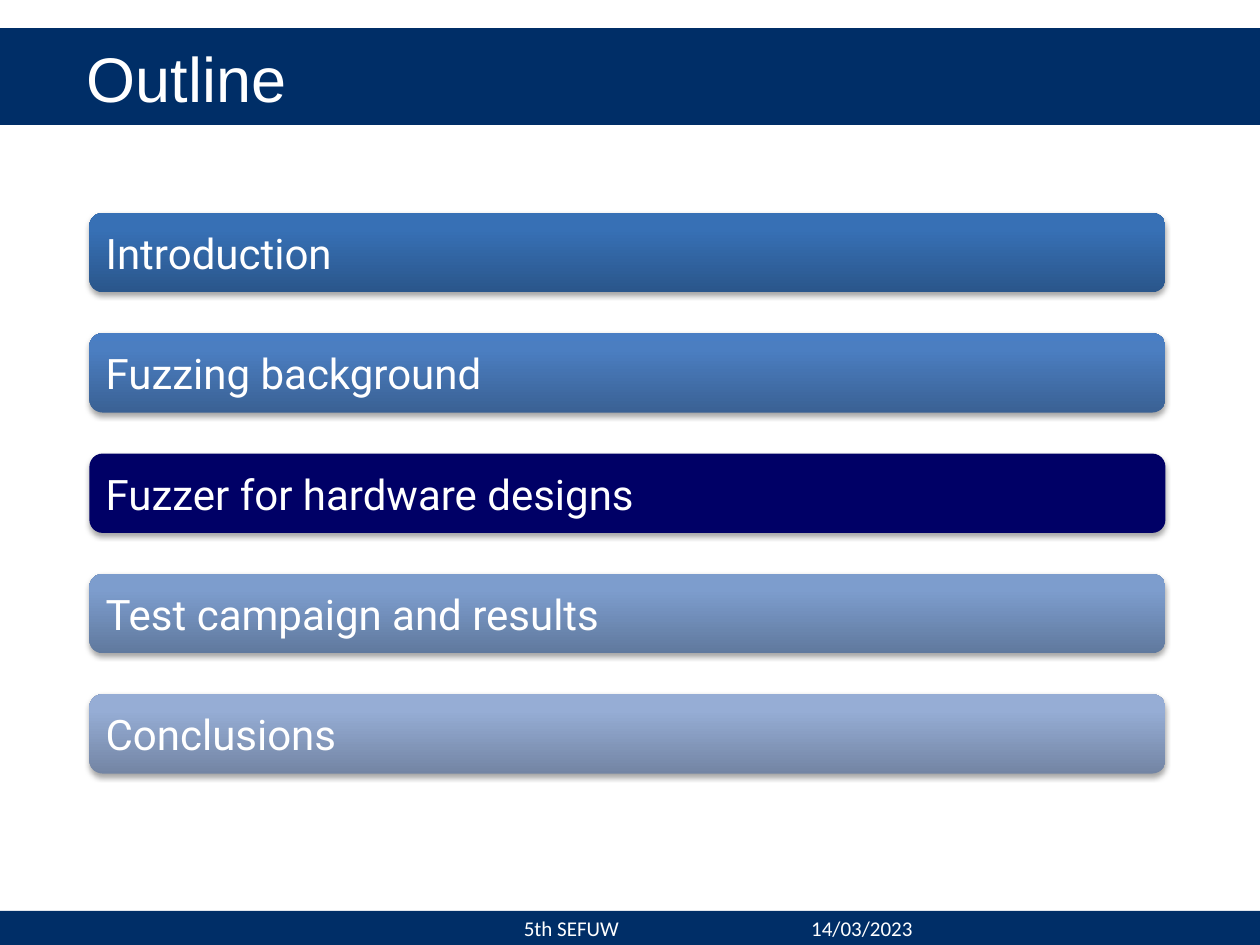
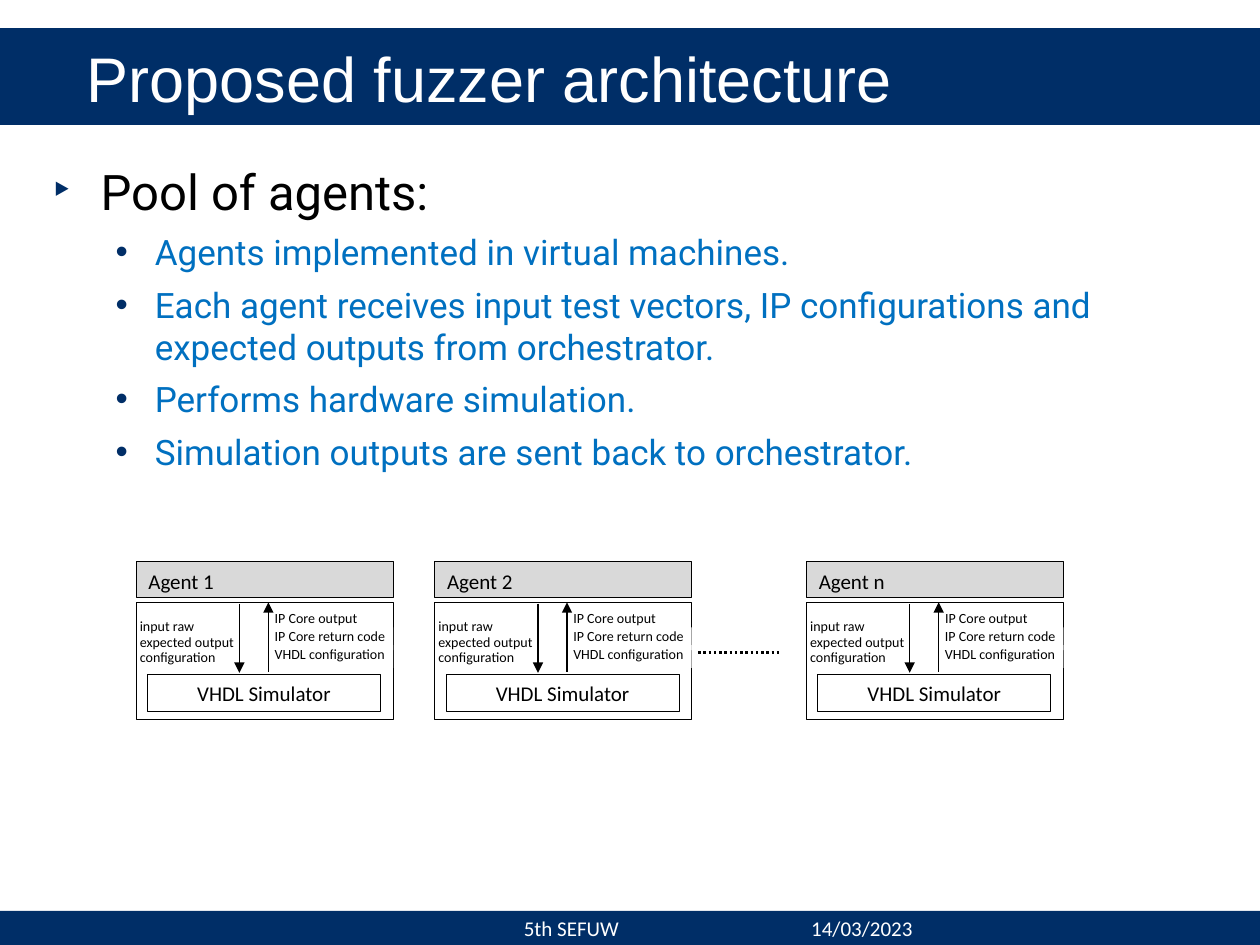
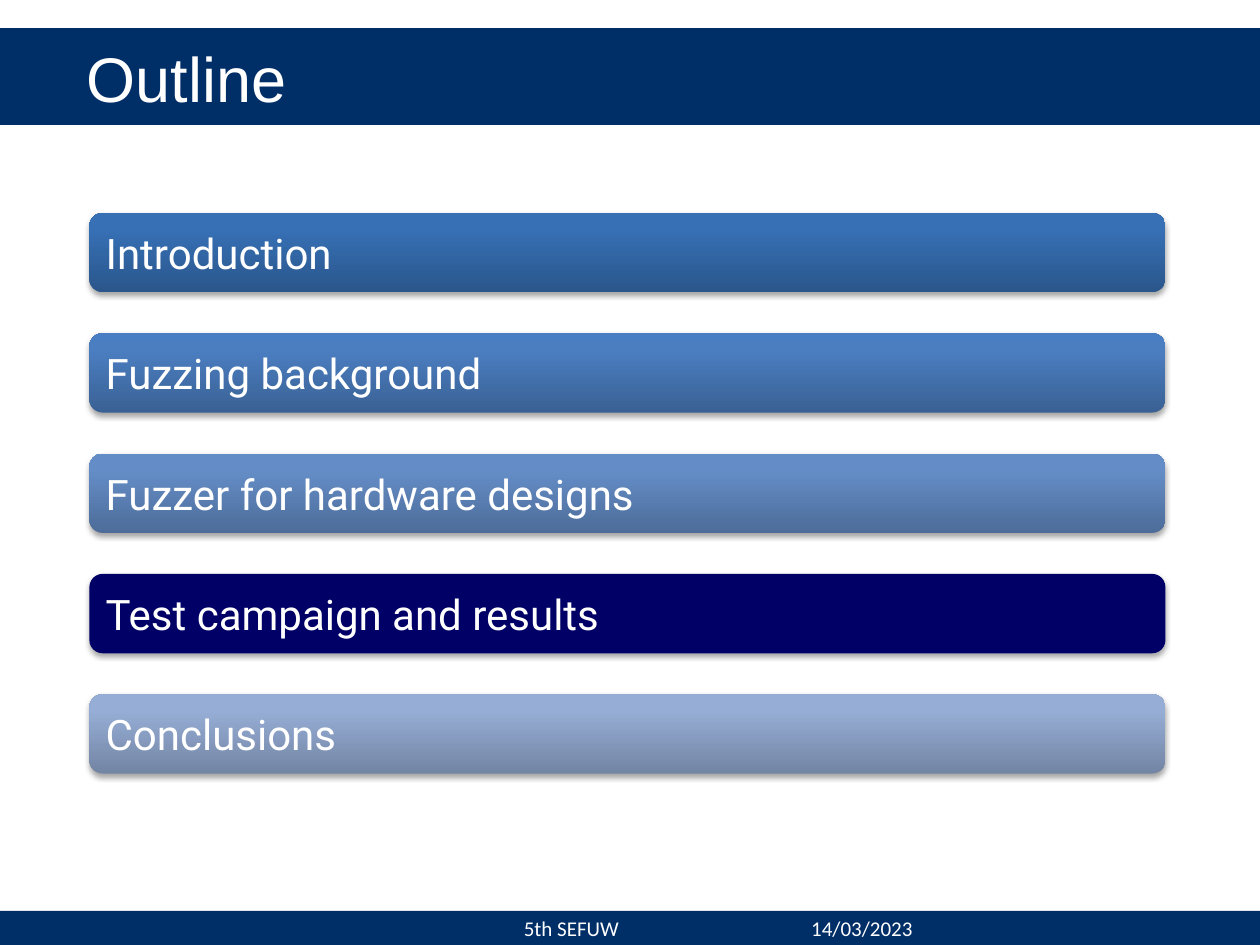
from lxml import etree
from pptx import Presentation
from pptx.dml.color import RGBColor
from pptx.enum.dml import MSO_LINE
from pptx.enum.shapes import MSO_CONNECTOR, MSO_SHAPE
from pptx.enum.text import MSO_ANCHOR, PP_ALIGN
from pptx.oxml.ns import qn
from pptx.util import Inches, Pt

WIDTH, HEIGHT = 10, 7.5
NAVY, ACTIVE, GREY, BLUE = "002E67", "000066", "D9D9D9", "0070C0"
BLACK, WHITE = "000000", "FFFFFF"

EVENT, DATE = "5th SEFUW", "14/03/2023"

# Section and its gradient from bottom to top, with stops at 0, 80 and 100 %
SECTIONS = [
    ("Introduction", ("2A568B", "3770B5", "3570B8")),
    ("Fuzzing background", ("3A6194", "4B7EC1", "497EC4")),
    ("Fuzzer for hardware designs", ("4D6C99", "648DC7", "638DCA")),
    ("Test campaign and results", ("60799E", "7D9DCD", "7C9DD0")),
    ("Conclusions", ("7385A4", "96ADD5", "95ADD7")),
]

POOL_HEADING = "Pool of agents:"
POOL_POINTS = [
    "Agents implemented in virtual machines.",
    "Each agent receives input test vectors, IP configurations and "
    "expected outputs from orchestrator.",
    "Performs hardware simulation.",
    "Simulation outputs are sent back to orchestrator.",
]

AGENTS = [("Agent 1", 1.08), ("Agent 2", 3.45), ("Agent n", 6.4)]
AGENT_INPUTS = ["input raw", "expected output", "configuration"]
AGENT_OUTPUTS = ["IP Core output", "IP Core return code", "VHDL configuration"]

prs = Presentation()
prs.slide_width, prs.slide_height = Inches(WIDTH), Inches(HEIGHT)


def rgb(value):
    return RGBColor.from_string(value)


def add_xml(parent, tag, **attrs):
    return etree.SubElement(parent, qn(tag), {k: str(v) for k, v in attrs.items()})


def add_box(slide, x, y, w, h, fill, line=None, weight=0.5, kind=MSO_SHAPE.RECTANGLE):
    sp = slide.shapes.add_shape(kind, Inches(x), Inches(y), Inches(w), Inches(h))
    sp.shadow.inherit = False
    sp.fill.solid()
    sp.fill.fore_color.rgb = rgb(fill)
    if line:
        sp.line.color.rgb = rgb(line)
        sp.line.width = Pt(weight)
    else:
        sp.line.fill.background()
    return sp


def add_textbox(slide, x, y, w, h):
    return slide.shapes.add_textbox(Inches(x), Inches(y), Inches(w), Inches(h))


def style(p, text, size, color, font):
    r = p.add_run()
    r.text = text
    r.font.size, r.font.name, r.font.color.rgb = Pt(size), font, rgb(color)


def write(sp, text, size=12, color=BLACK, font="Calibri", align=PP_ALIGN.LEFT,
          anchor=MSO_ANCHOR.TOP, insets=(0.1, 0.05)):
    tf = sp.text_frame
    tf.word_wrap = True
    tf.vertical_anchor = anchor
    tf.margin_left = tf.margin_right = Inches(insets[0])
    tf.margin_top = tf.margin_bottom = Inches(insets[1])
    p = tf.paragraphs[0]
    p.alignment = align
    style(p, text, size, color, font)


def add_line(slide, x1, y1, x2, y2, weight=0.75, arrow=True):
    c = slide.shapes.add_connector(MSO_CONNECTOR.STRAIGHT, Inches(x1), Inches(y1),
                                   Inches(x2), Inches(y2))
    c.line.color.rgb = rgb(BLACK)
    c.line.width = Pt(weight)
    if arrow:
        add_xml(c.line._get_or_add_ln(), "a:tailEnd", type="triangle")
    else:
        c.line.dash_style = MSO_LINE.ROUND_DOT
    add_xml(c._element.spPr, "a:effectLst")


def add_slide(title):
    slide = prs.slides.add_slide(prs.slide_layouts[6])
    add_box(slide, 0, 7.23, WIDTH, HEIGHT - 7.23, NAVY)
    add_box(slide, 0, 0.24, WIDTH, 0.74, NAVY, line=NAVY, weight=2)
    write(add_textbox(slide, 0.59, 0.24, 8.2, 0.74), title, size=36, color=WHITE,
          font="Arial", anchor=MSO_ANCHOR.MIDDLE)
    for text, x, w, align in ((DATE, 6.34, 1.34, PP_ALIGN.LEFT),
                              (EVENT, 2.95, 3.17, PP_ALIGN.CENTER)):
        write(add_textbox(slide, x, 7.24, w, 0.26), text, color=WHITE, align=align,
              anchor=MSO_ANCHOR.MIDDLE, insets=(0.1, 0))
    return slide


def set_gradient(sp, colors):
    grad = etree.Element(qn("a:gradFill"), rotWithShape="1")
    stops = add_xml(grad, "a:gsLst")
    for pos, color in zip((0, 80, 100), colors):
        add_xml(add_xml(stops, "a:gs", pos=pos * 1000), "a:srgbClr", val=color)
    add_xml(grad, "a:lin", ang=270 * 60000, scaled=0)
    spPr = sp._element.spPr
    spPr.replace(spPr.find(qn("a:solidFill")), grad)


def add_soft_shadow(sp):
    effects = sp._element.spPr.find(qn("a:effectLst"))
    shadow = add_xml(effects, "a:outerShdw", blurRad=Pt(3.1), dist=Pt(1.8),
                     dir=90 * 60000, rotWithShape=0)
    add_xml(add_xml(shadow, "a:srgbClr", val=BLACK), "a:alpha", val=35000)


def add_outline(current):
    """Add the outline slide with the current section highlighted."""
    slide = add_slide("Outline")
    for i, (name, colors) in enumerate(SECTIONS):
        bar = add_box(slide, 0.71, 1.69 + i * 0.955, 8.54, 0.63, ACTIVE,
                      kind=MSO_SHAPE.ROUNDED_RECTANGLE)
        if name != current:
            set_gradient(bar, colors)
        add_soft_shadow(bar)
        write(bar, name, size=24, color=WHITE, font="Roboto",
              anchor=MSO_ANCHOR.MIDDLE, insets=(0.1, 0.1))


def add_bullet(p, char, left, hanging):
    pPr = p._p.get_or_add_pPr()
    pPr.set("marL", str(Inches(left)))
    pPr.set("indent", str(-Inches(hanging)))
    add_xml(add_xml(pPr, "a:buClr"), "a:srgbClr", val=NAVY)
    add_xml(pPr, "a:buFont", typeface="Arial")
    add_xml(pPr, "a:buChar", char=char)
    p.space_after = Pt(6)


def add_agent(slide, name, x):
    add_box(slide, x, 4.78, 2.04, 0.93, WHITE, line=BLACK)
    add_line(slide, x + 0.82, 4.79, x + 0.82, 5.34)
    add_line(slide, x + 1.05, 5.33, x + 1.05, 4.78)
    write(add_box(slide, x, 4.46, 2.04, 0.28, GREY, line=BLACK), name)
    for i, text in enumerate(AGENT_INPUTS):
        write(add_textbox(slide, x + 0.03, 4.9 + i * 0.125, 0.87, 0.17), text,
              size=8, insets=(0, 0))
    for i, text in enumerate(AGENT_OUTPUTS):
        w = 0.94 if i else 0.85
        write(add_box(slide, x + 1.1, 4.84 + i * 0.14, w, 0.18, WHITE), text,
              size=8, insets=(0, 0))
    write(add_box(slide, x + 0.09, 5.35, 1.85, 0.3, WHITE, line=BLACK),
          "VHDL Simulator", align=PP_ALIGN.CENTER)


def add_architecture():
    slide = add_slide("Proposed fuzzer architecture")
    add_line(slide, 5.54, 5.18, 6.18, 5.18, weight=1.5, arrow=False)
    for name, x in AGENTS:
        add_agent(slide, name, x)
    body = add_textbox(slide, 0.32, 1.23, 9.01, 3.1)
    write(body, POOL_HEADING, size=28, font="Roboto")
    tf = body.text_frame
    add_bullet(tf.paragraphs[0], "‣", 0.38, 0.38)
    for point in POOL_POINTS:
        p = tf.add_paragraph()
        p.level = 1
        add_bullet(p, "•", 0.81, 0.31)
        style(p, point, 20, BLUE, "Roboto")


add_outline("Fuzzer for hardware designs")
add_architecture()
add_outline("Test campaign and results")
prs.save("out.pptx")
